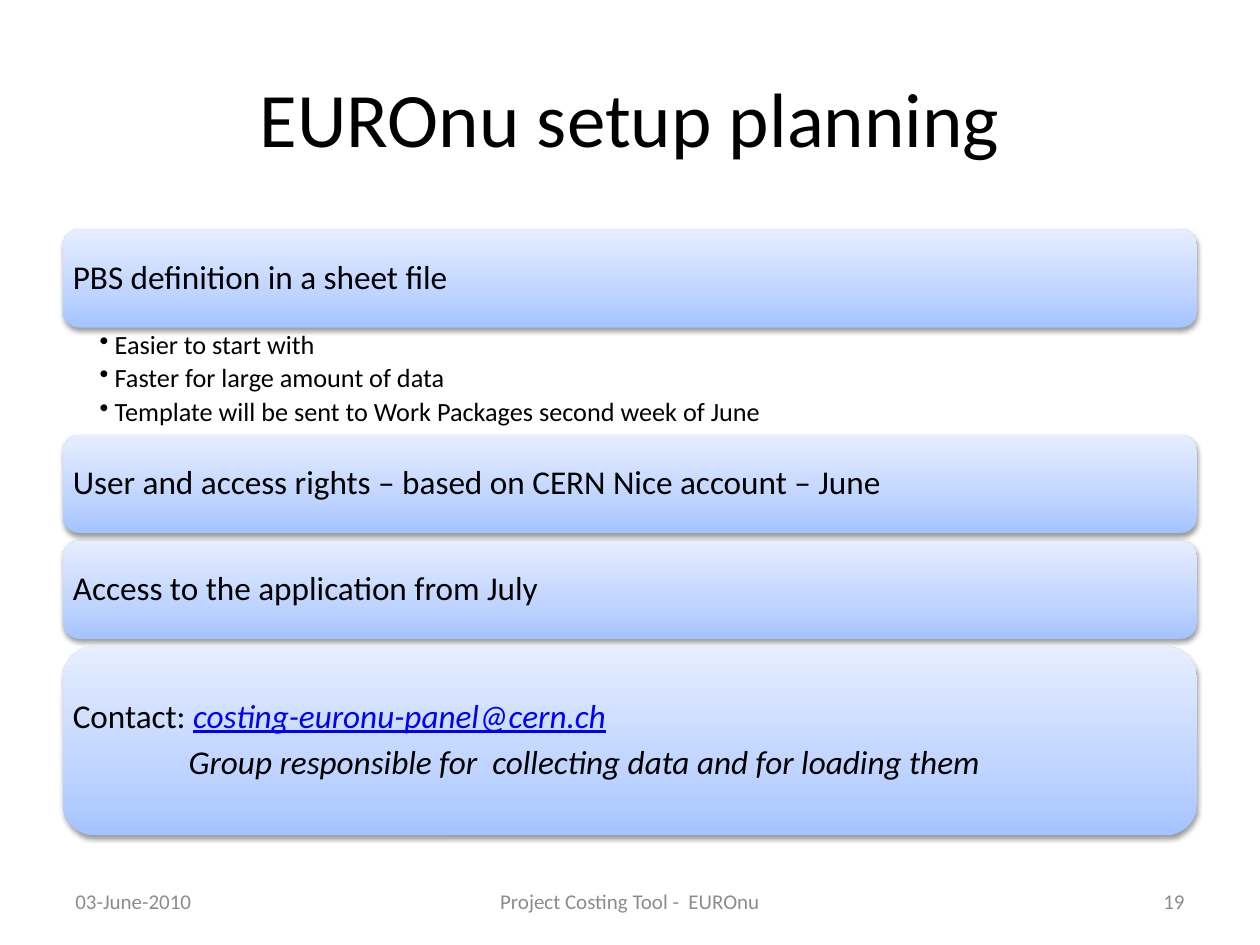
import pptx
import pptx.util
import pptx.oxml
import pptx.dml.color
import pptx.enum.shapes
import pptx.enum.text
from dataclasses import dataclass
from pptx.util import Inches

ALIGN = pptx.enum.text.PP_ALIGN
ANCHOR = pptx.enum.text.MSO_ANCHOR
NAMESPACE = 'xmlns:a="http://schemas.openxmlformats.org/drawingml/2006/main"'


@dataclass(frozen=True)
class Theme:
    font: str = "Calibri"
    ink: str = "000000"
    link: str = "0000FF"
    muted: str = "8C8C8C"
    gradient: tuple = ((0, "A4C4FF"), (35, "BFD4FF"), (100, "E6EEFF"))
    title_size: int = 44
    panel_size: int = 19
    bullet_size: int = 15
    footer_size: int = 12


THEME = Theme()


def style_span(span, size, color=THEME.ink, italic=None, underline=None):
    span.font.name = THEME.font
    span.font.size = pptx.util.Pt(size)
    span.font.color.rgb = pptx.dml.color.RGBColor.from_string(color)
    span.font.italic = italic
    span.font.underline = underline


def set_margins(frame, left, top, right, bottom):
    frame.margin_left = Inches(left)
    frame.margin_top = Inches(top)
    frame.margin_right = Inches(right)
    frame.margin_bottom = Inches(bottom)


def space_para(para, after):
    para.alignment = ALIGN.LEFT
    para.line_spacing = 0.9
    para.space_after = pptx.util.Pt(after)


def add_text_box(page, left, top, width, height):
    box = page.shapes.add_textbox(Inches(left), Inches(top), Inches(width), Inches(height))
    box.text_frame.word_wrap = True
    return box


def paint_panel(panel):
    panel.shadow.inherit = False
    panel.line.fill.background()
    properties = panel.fill._xPr
    stops = "".join(
        f'<a:gs pos="{place * 1000}"><a:srgbClr val="{color}"/></a:gs>'
        for place, color in THEME.gradient
    )
    gradient = pptx.oxml.parse_xml(
        f'<a:gradFill {NAMESPACE} rotWithShape="1"><a:gsLst>{stops}</a:gsLst>'
        '<a:lin ang="16200000" scaled="0"/></a:gradFill>'
    )
    properties.find(pptx.oxml.ns.qn("a:ln")).addprevious(gradient)
    effects = properties.find(pptx.oxml.ns.qn("a:effectLst"))
    effects.append(pptx.oxml.parse_xml(
        f'<a:outerShdw {NAMESPACE} blurRad="{pptx.util.Pt(3.1)}" dist="{pptx.util.Pt(1.6)}" '
        'dir="5400000" rotWithShape="0"><a:srgbClr val="000000">'
        '<a:alpha val="38000"/></a:srgbClr></a:outerShdw>'
    ))


def add_title(page, text, left, top, width, height):
    title = page.shapes.title
    title.left, title.top = Inches(left), Inches(top)
    title.width, title.height = Inches(width), Inches(height)
    title.text_frame.text = text
    title.text_frame.vertical_anchor = ANCHOR.MIDDLE
    para = title.text_frame.paragraphs[0]
    para.alignment = ALIGN.CENTER
    style_span(para.runs[0], THEME.title_size)


def add_panel(page, text, left, top, width, height):
    panel = page.shapes.add_shape(
        pptx.enum.shapes.MSO_SHAPE.ROUNDED_RECTANGLE,
        Inches(left), Inches(top), Inches(width), Inches(height),
    )
    paint_panel(panel)
    frame = panel.text_frame
    frame.word_wrap = True
    frame.vertical_anchor = ANCHOR.MIDDLE
    corner_inset = 0.05 * height
    set_margins(frame, 0.08 - corner_inset, 0, 0.08 - corner_inset, 0)
    frame.text = text
    para = frame.paragraphs[0]
    space_para(para, 6)
    style_span(para.runs[0], THEME.panel_size)
    return frame


def add_contact_panel(page, label, address, note, left, top, width, height):
    frame = add_panel(page, label, left, top, width, height)
    span = frame.paragraphs[0].add_run()
    span.text = address
    style_span(span, THEME.panel_size, THEME.link, italic=True, underline=True)
    para = frame.add_paragraph()
    para.text = note
    space_para(para, 6)
    para._p.get_or_add_pPr().set("marL", str(Inches(0.92)))
    style_span(para.runs[0], THEME.panel_size, italic=True)


def add_bullets(page, items, left, top, width, height):
    frame = add_text_box(page, left, top, width, height).text_frame
    set_margins(frame, 0.29, 0.03, 0.15, 0.03)
    frame.text = "\n".join(items)
    for para in frame.paragraphs:
        space_para(para, 3)
        properties = para._p.get_or_add_pPr()
        properties.set("marL", str(Inches(0.12)))
        properties.set("indent", str(-Inches(0.12)))
        properties.append(pptx.oxml.parse_xml(f'<a:buChar {NAMESPACE} char="•"/>'))
        style_span(para.runs[0], THEME.bullet_size)


def add_footer(page, date, name, number, left, top, width, height):
    side, middle = 2.33, 3.17
    columns = (
        (date, left, side, ALIGN.LEFT),
        (name, left + (width - middle) / 2, middle, ALIGN.CENTER),
        (number, left + width - side, side, ALIGN.RIGHT),
    )
    for text, start, span_width, alignment in columns:
        frame = add_text_box(page, start, top, span_width, height).text_frame
        frame.vertical_anchor = ANCHOR.MIDDLE
        frame.text = text
        para = frame.paragraphs[0]
        para.alignment = alignment
        style_span(para.runs[0], THEME.footer_size, THEME.muted)


def add_plan(page, left, top, width):
    panel, bullets, gap = 0.78, 0.85, 0.06
    add_panel(page, "PBS definition in a sheet file", left, top, width, panel)
    top += panel
    add_bullets(page, (
        "Easier to start with",
        "Faster for large amount of data",
        "Template will be sent to Work Packages second week of June",
    ), left, top, width, bullets)
    top += bullets
    for text in (
        "User and access rights – based on CERN Nice account – June",
        "Access to the application from July",
    ):
        add_panel(page, text, left, top, width, panel)
        top += panel + gap
    add_contact_panel(
        page, "Contact: ", "costing-euronu-panel@cern.ch",
        "Group responsible for  collecting data and for loading them",
        left, top, width, 1.5,
    )


def main():
    deck = pptx.Presentation()
    deck.slide_width, deck.slide_height = Inches(10), Inches(7.5)
    page = deck.slides.add_slide(deck.slide_layouts.get_by_name("Title Only"))
    left, width = 0.5, 9
    add_title(page, "EUROnu setup planning", left, 0.3, width, 1.25)
    add_plan(page, left, 1.82, width)
    add_footer(page, "03-June-2010", "Project Costing Tool -  EUROnu", "19",
               left, 6.95, width, 0.4)
    deck.save("out.pptx")


if __name__ == "__main__":
    main()
